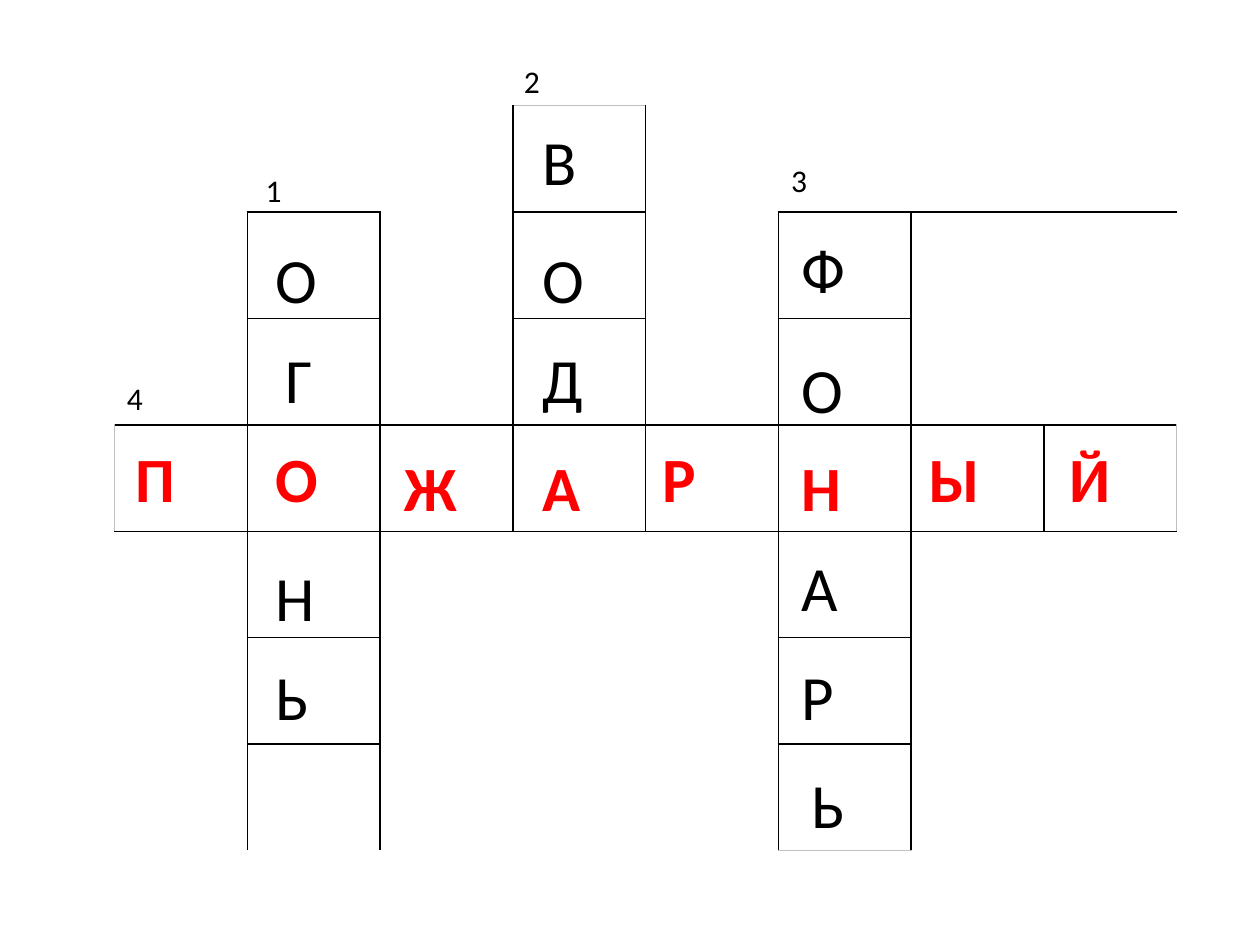
from lxml.etree import SubElement
from pptx import Presentation
from pptx.dml.color import RGBColor
from pptx.enum.text import PP_ALIGN
from pptx.oxml.ns import qn
from pptx.util import Pt

PX = 9144  # EMU per px, 100 px to the inch
BLACK = RGBColor(0x00, 0x00, 0x00)
RED = RGBColor(0xFF, 0x00, 0x00)
GREY = RGBColor(0xBF, 0xBF, 0xBF)
FONT = "Calibri"
NO_GRID_STYLE = "{2D5ABB26-0587-4C30-8999-92F81FD0307C}"

ROWS, COLUMNS = 7, 8
ANSWER_ROW = 3
GRID_BOX = (91, 84, 843, 591)
# Columns of the vertical words, with the first and last row of each
WORD_SPANS = {1: (1, 5), 3: (0, 3), 5: (1, 6)}
# Empty areas: row, column, rows spanned, columns spanned
EMPTY_AREAS = [
    (0, 0, 1, 3), (0, 4, 3, 1), (0, 5, 1, 3), (1, 0, 2, 1), (1, 2, 2, 1),
    (1, 6, 1, 2), (2, 6, 1, 2), (4, 0, 3, 1), (4, 2, 3, 1), (4, 3, 3, 2),
    (4, 6, 1, 2), (5, 6, 1, 2), (6, 6, 1, 2),
]
# Letter, left, top and width, relative to the grid box
VERTICAL_LETTERS = [
    ("О", 118, 102, 71), ("Г", 126, 181, 36), ("Н", 118, 354, 63), ("Ь", 118, 433, 55),
    ("В", 330, 8, 71), ("О", 330, 102, 63), ("Д", 330, 181, 79),
    ("Ф", 535, 94, 71), ("О", 535, 189, 71), ("А", 535, 346, 52), ("Р", 535, 433, 79),
    ("Ь", 543, 519, 47),
]
ANSWER_LETTERS = [
    ("П", 7, 260, 63), ("О", 118, 260, 55), ("Ж", 220, 267, 71), ("А", 330, 267, 63),
    ("Р", 425, 260, 79), ("Н", 535, 267, 79), ("Ы", 637, 260, 87), ("Й", 748, 260, 79),
]
CLUE_NUMBERS = [("1", 110, 47), ("2", 315, -40), ("3", 527, 39), ("4", 0, 212)]


def is_letter_cell(row, column):
    first, last = WORD_SPANS.get(column, (ANSWER_ROW, ANSWER_ROW))
    return row == ANSWER_ROW or first <= row <= last


def set_borders(cell, borders):
    """Draw the given borders: side -> (colour, width in points)."""
    properties = cell._tc.get_or_add_tcPr()
    for position, side in enumerate(side for side in "LRTB" if side in borders):
        color, width = borders[side]
        line = SubElement(properties, qn(f"a:ln{side}"), w=str(Pt(width)))
        fill = SubElement(line, qn("a:solidFill"))
        SubElement(fill, qn("a:srgbClr"), val=str(color))
        properties.insert(position, line)


def add_grid(slide, box):
    left, top, width, height = (length * PX for length in box)
    frame = slide.shapes.add_table(ROWS, COLUMNS, left, top, width, height)
    table = frame.table
    table.first_row = table.horz_banding = False
    table._tbl.tblPr.find(qn("a:tableStyleId")).text = NO_GRID_STYLE
    for row in range(ROWS):
        for column in range(COLUMNS):
            cell = table.cell(row, column)
            cell.fill.background()
            if is_letter_cell(row, column):
                # The outer edge of the table is thin and grey
                outer = {"L": column == 0, "R": column == COLUMNS - 1,
                         "T": row == 0, "B": row == ROWS - 1}
                set_borders(cell, {side: (GREY, 0.5) if edge else (BLACK, 1)
                                   for side, edge in outer.items()})
    # The line beside the first word runs on to the bottom row
    set_borders(table.cell(ROWS - 1, 1), {"R": (BLACK, 1)})
    for row, column, rows, columns in EMPTY_AREAS:
        last_cell = table.cell(row + rows - 1, column + columns - 1)
        table.cell(row, column).merge(last_cell)


def add_label(slide, text, box, size, color=BLACK, bold=False, wrap=True):
    shape = slide.shapes.add_textbox(*(length * PX for length in box))
    text_frame = shape.text_frame
    text_frame.word_wrap = wrap
    text_frame.text = text
    font = text_frame.paragraphs[0].runs[0].font
    font.name, font.size, font.bold = FONT, Pt(size), bold
    font.color.rgb = color
    return shape


def add_crossword(slide, box):
    left, top = box[:2]
    add_grid(slide, box)
    # Letters of the vertical words, then of the answer
    for letters, color, bold in ((VERTICAL_LETTERS, BLACK, False), (ANSWER_LETTERS, RED, True)):
        for letter, x, y, width in letters:
            shape = add_label(slide, letter, (left + x, top + y, width, 71), 36, color, bold)
            if letter == "Г":
                shape.text_frame.paragraphs[0].alignment = PP_ALIGN.CENTER
    # Clue numbers
    for number, x, y in CLUE_NUMBERS:
        add_label(slide, number, (left + x, top + y, 33, 40), 18, wrap=False)


def main():
    presentation = Presentation()
    presentation.slide_width = 1000 * PX
    presentation.slide_height = 750 * PX
    slide = presentation.slides.add_slide(presentation.slide_layouts[6])
    add_crossword(slide, GRID_BOX)
    presentation.save("out.pptx")


if __name__ == "__main__":
    main()
